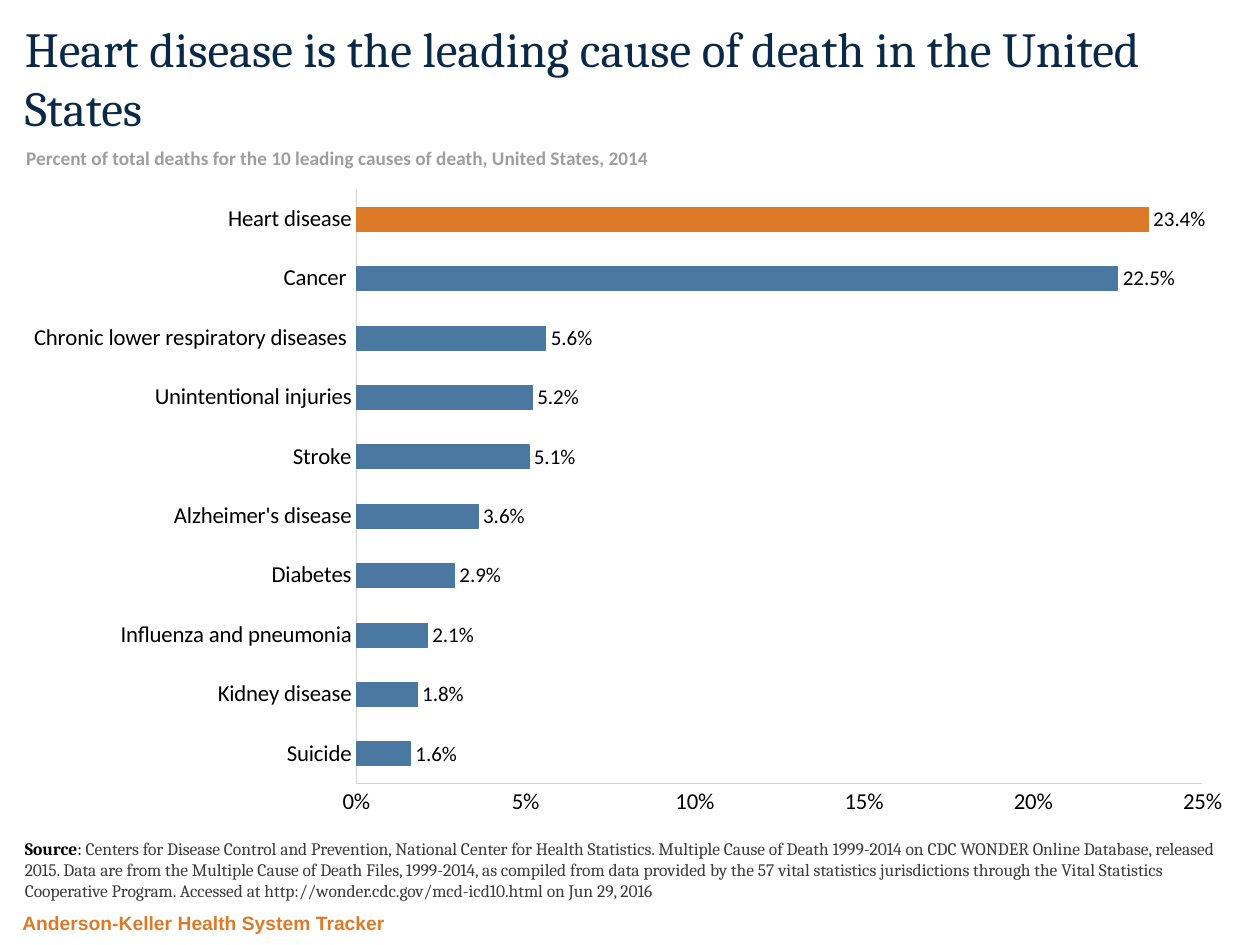
from dataclasses import dataclass

from lxml import etree
from pptx import Presentation
from pptx.chart.data import CategoryChartData
from pptx.dml.color import RGBColor
from pptx.enum.chart import XL_CHART_TYPE as ChartType
from pptx.enum.chart import XL_LABEL_POSITION as LabelPosition
from pptx.enum.chart import XL_TICK_MARK as TickMark
from pptx.enum.text import MSO_ANCHOR as Anchor
from pptx.oxml.ns import qn
from pptx.util import Cm, Pt


@dataclass(frozen=True)
class Theme:
    serif: str = "Cambria"
    sans: str = "Calibri"
    brand_font: str = "Arial"
    navy: str = "092947"
    blue: str = "4B78A1"
    orange: str = "DC7A27"
    black: str = "000000"
    charcoal: str = "3C3A3B"
    gray: str = "9E9E9E"
    rule: str = "D3D3D3"
    title_size: float = 28
    axis_size: float = 13
    label_size: float = 12
    subtitle_size: float = 11
    source_size: float = 10
    line_width: float = 0.75


THEME = Theme()

DEATH_SHARES = {
    "Suicide": 0.016,
    "Kidney disease": 0.018,
    "Influenza and pneumonia": 0.021,
    "Diabetes": 0.029,
    "Alzheimer's disease": 0.036,
    "Stroke": 0.051,
    "Unintentional injuries": 0.052,
    "Chronic lower respiratory diseases ": 0.056,
    "Cancer ": 0.225,
    "Heart disease": 0.234,
}

CITATION = (
    "Centers for Disease Control and Prevention, National Center for Health "
    "Statistics. Multiple Cause of Death 1999-2014 on CDC WONDER Online Database, "
    "released 2015. Data are from the Multiple Cause of Death Files, 1999-2014, as "
    "compiled from data provided by the 57 vital statistics jurisdictions through "
    "the Vital Statistics Cooperative Program. Accessed at "
    "http://wonder.cdc.gov/mcd-icd10.html on Jun 29, 2016"
)


def style_font(font, name, size, color, bold=False):
    font.name = name
    font.size = Pt(size)
    font.bold = bold
    font.color.rgb = RGBColor.from_string(color)


def add_text(slide, place, runs, font_name, size, anchor=Anchor.TOP, wrap=True):
    frame = slide.shapes.add_textbox(*map(Cm, place)).text_frame
    frame.word_wrap = wrap
    frame.vertical_anchor = anchor
    paragraph = frame.paragraphs[0]
    for text, color, bold in runs:
        run = paragraph.add_run()
        run.text = text
        style_font(run.font, font_name, size, color, bold)


def style_line(line, color):
    line.color.rgb = RGBColor.from_string(color)
    line.width = Pt(THEME.line_width)


def style_axis(axis):
    axis.has_major_gridlines = False
    axis.major_tick_mark = TickMark.NONE
    axis.minor_tick_mark = TickMark.NONE
    style_line(axis.format.line, THEME.rule)


def paint_bar(bar, color):
    bar.format.fill.solid()
    bar.format.fill.fore_color.rgb = RGBColor.from_string(color)
    style_line(bar.format.line, color)


def place_plot(chart, **fractions):
    plot_area = chart.element.find(".//" + qn("c:plotArea"))
    for automatic in plot_area.findall(qn("c:layout")):
        plot_area.remove(automatic)
    layout = etree.Element(qn("c:layout"))
    manual = etree.SubElement(layout, qn("c:manualLayout"))
    settings = {"layoutTarget": "inner", "xMode": "edge", "yMode": "edge", **fractions}
    for tag, value in settings.items():
        etree.SubElement(manual, qn("c:" + tag)).set("val", str(value))
    plot_area.insert(0, layout)


def add_death_chart(slide, place):
    shares = CategoryChartData(number_format="0.0%")
    shares.categories = list(DEATH_SHARES)
    shares.add_series("Series 1", list(DEATH_SHARES.values()))
    chart = slide.shapes.add_chart(
        ChartType.BAR_CLUSTERED, *map(Cm, place), shares
    ).chart
    chart.has_legend = False
    chart.has_title = False
    style_font(chart.font, THEME.sans, THEME.axis_size, THEME.black)
    place_plot(chart, x=0.28, y=0.02, w=0.684, h=0.91)

    style_axis(chart.category_axis)
    percent_axis = chart.value_axis
    style_axis(percent_axis)
    percent_axis.minimum_scale = 0
    percent_axis.maximum_scale = 0.25
    percent_axis.major_unit = 0.05
    percent_axis.tick_labels.number_format = "0%"
    percent_axis.tick_labels.number_format_is_linked = False

    plot = chart.plots[0]
    plot.gap_width = 150
    plot.vary_by_categories = False
    causes = plot.series[0]
    paint_bar(causes, THEME.blue)
    paint_bar(causes.points[len(DEATH_SHARES) - 1], THEME.orange)

    labels = causes.data_labels
    labels.show_value = True
    labels.number_format = "0.0%"
    labels.number_format_is_linked = False
    labels.position = LabelPosition.OUTSIDE_END
    style_font(labels.font, THEME.sans, THEME.label_size, THEME.black)


def main():
    deck = Presentation()
    deck.slide_width, deck.slide_height = Cm(25.4), Cm(19.05)
    slide = deck.slides.add_slide(deck.slide_layouts[6])

    add_text(
        slide, (0.2, 18.21, 20.27, 0.76),
        [("Anderson-Keller Health System Tracker", THEME.orange, True)],
        THEME.brand_font, THEME.subtitle_size, Anchor.BOTTOM,
    )
    add_text(
        slide, (0.25, 16.26, 24.94, 2.03),
        [
            ("Source", THEME.black, True),
            (": ", THEME.black, False),
            (CITATION, THEME.charcoal, False),
        ],
        THEME.serif, THEME.source_size, Anchor.BOTTOM,
    )
    add_text(
        slide, (0.25, 0.25, 24.89, 2.54),
        [("Heart disease is the leading cause of death in the United States",
          THEME.navy, False)],
        THEME.serif, THEME.title_size,
    )
    add_death_chart(slide, (0.2, 3.56, 24.94, 13.16))
    add_text(
        slide, (0.28, 2.82, 13.21, 0.74),
        [("Percent of total deaths for the 10 leading causes of death, "
          "United States, 2014", THEME.gray, True)],
        THEME.sans, THEME.subtitle_size, wrap=False,
    )
    deck.save("out.pptx")


if __name__ == "__main__":
    main()
